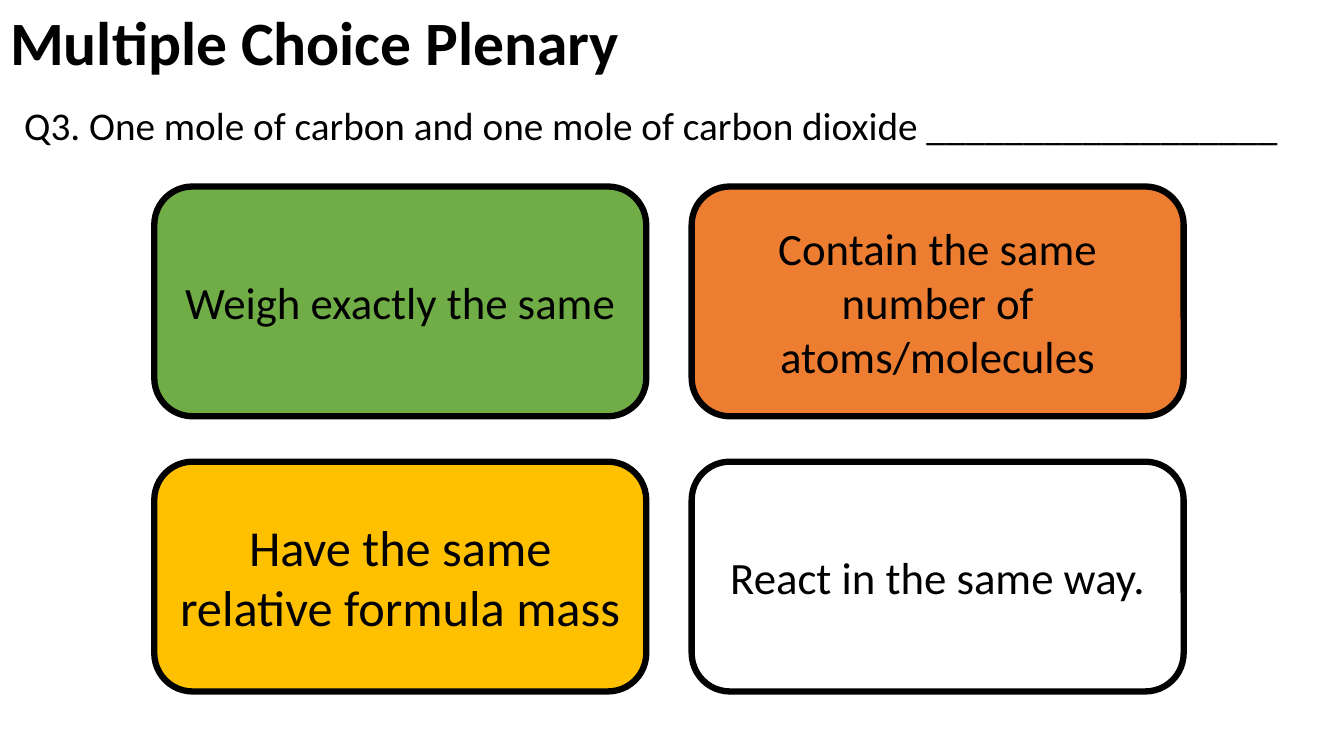
from dataclasses import dataclass

from pptx import Presentation
from pptx.dml.color import RGBColor
from pptx.enum.shapes import MSO_SHAPE
from pptx.enum.text import MSO_ANCHOR, MSO_AUTO_SIZE, PP_ALIGN
from pptx.oxml.xmlchemy import OxmlElement
from pptx.util import Inches, Pt


@dataclass(frozen=True)
class Theme:
    font: str = "Calibri"
    ink: str = "000000"
    green: str = "70AD47"
    orange: str = "ED7D31"
    gold: str = "FFC000"
    white: str = "FFFFFF"
    head: int = 44
    ask: int = 28
    answer: int = 32
    large: int = 36
    border: float = 4.5


def color(code):
    return RGBColor.from_string(code)


def write(shape, text, theme, size, bold=False, align=PP_ALIGN.LEFT,
          anchor=MSO_ANCHOR.MIDDLE, line=1.0, before=0):
    """Fill a shape with one formatted paragraph and return it."""
    frame = shape.text_frame
    frame.text = text
    frame.word_wrap = True
    frame.auto_size = MSO_AUTO_SIZE.NONE
    frame.vertical_anchor = anchor
    para = frame.paragraphs[0]
    para.alignment = align
    para.line_spacing = line
    para.space_before = Pt(before)
    font = para.runs[0].font
    font.name = theme.font
    font.size = Pt(size)
    font.bold = bold
    font.color.rgb = color(theme.ink)
    return para


def place(shape, left, top, width, height):
    shape.left, shape.top = Inches(left), Inches(top)
    shape.width, shape.height = Inches(width), Inches(height)


class Quiz:
    def __init__(self, deck, theme):
        self.theme = theme
        self.slide = deck.slides.add_slide(deck.slide_layouts[1])

    def title(self, text):
        shape = self.slide.shapes.title
        place(shape, 0, 0, 13.33, 0.9)
        write(shape, text, self.theme, self.theme.head, bold=True, line=0.9)

    def question(self, text):
        shape = self.slide.placeholders[1]
        place(shape, 0.14, 1.01, 13, 5.75)
        para = write(shape, text, self.theme, self.theme.ask,
                     anchor=MSO_ANCHOR.TOP, line=0.9, before=10)
        props = para._p.get_or_add_pPr()
        props.set("marL", "0")
        props.set("indent", "0")
        props.append(OxmlElement("a:buNone"))

    def answer(self, text, fill, size, left, top, width, height):
        shape = self.slide.shapes.add_shape(
            MSO_SHAPE.ROUNDED_RECTANGLE, Inches(left), Inches(top),
            Inches(width), Inches(height))
        shape.shadow.inherit = False
        shape.fill.solid()
        shape.fill.fore_color.rgb = color(fill)
        shape.line.color.rgb = color(self.theme.ink)
        shape.line.width = Pt(self.theme.border)
        write(shape, text, self.theme, size, align=PP_ALIGN.CENTER)


def main():
    deck = Presentation()
    deck.slide_width, deck.slide_height = Inches(13.33), Inches(7.5)
    theme = Theme()
    quiz = Quiz(deck, theme)
    quiz.title("Multiple Choice Plenary")
    quiz.question("Q3. One mole of carbon and one mole of carbon dioxide "
                  + "_" * 18)

    answers = [
        ("Weigh exactly the same", theme.green, theme.answer),
        ("Contain the same number of atoms/molecules", theme.orange,
         theme.answer),
        ("Have the same relative formula mass", theme.gold, theme.large),
        ("React in the same way.", theme.white, theme.answer),
    ]
    width, height, gap = 4.88, 2.28, 0.45
    for i, (text, fill, size) in enumerate(answers):
        row, col = divmod(i, 2)
        quiz.answer(text, fill, size, 1.53 + col * (width + gap),
                    1.85 + row * (height + gap), width, height)

    deck.save("out.pptx")


if __name__ == "__main__":
    main()
